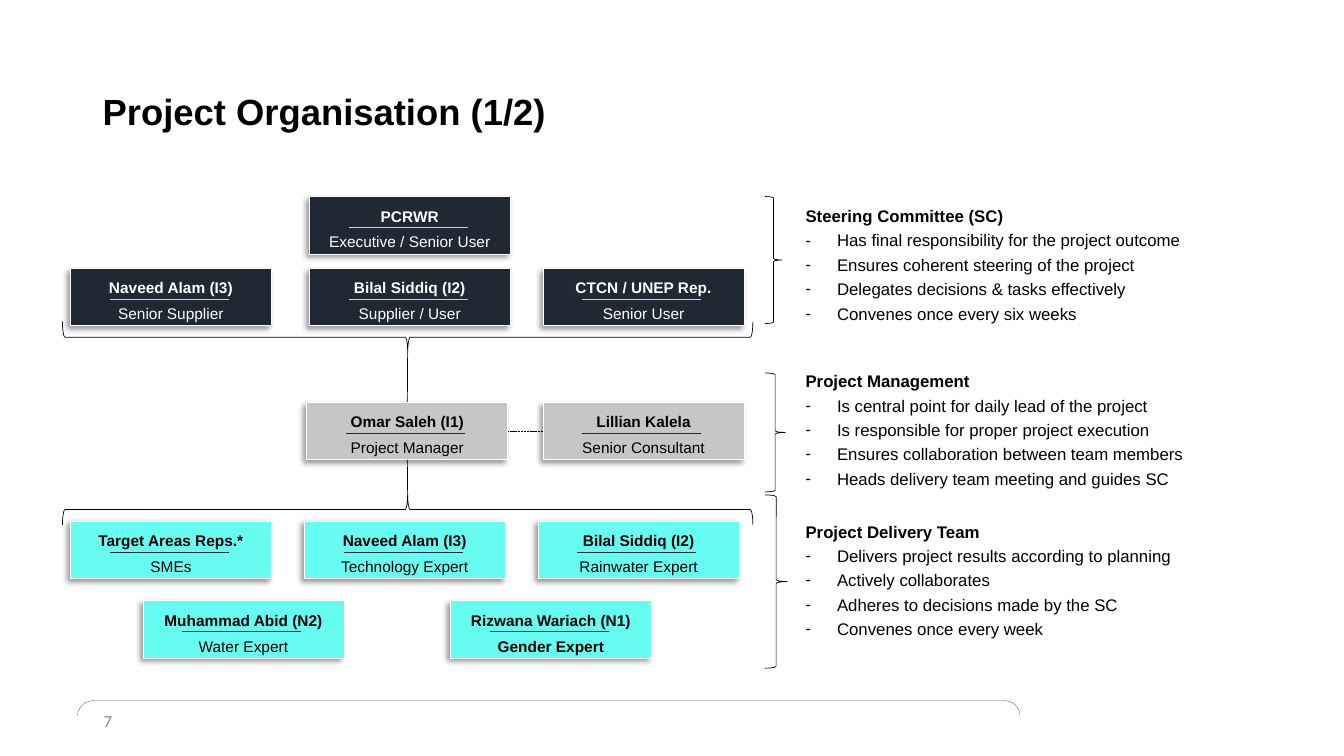
from dataclasses import dataclass

from lxml import etree
from pptx import Presentation
from pptx.dml.color import RGBColor
from pptx.enum.dml import MSO_LINE
from pptx.enum.shapes import MSO_CONNECTOR, MSO_SHAPE
from pptx.enum.text import MSO_ANCHOR, MSO_AUTO_SIZE, PP_ALIGN
from pptx.oxml.ns import qn
from pptx.util import Pt

RECT, BRACE, BRACKET = MSO_SHAPE.RECTANGLE, MSO_SHAPE.RIGHT_BRACE, MSO_SHAPE.LEFT_BRACKET
STRAIGHT, DASH = MSO_CONNECTOR.STRAIGHT, MSO_LINE.SQUARE_DOT
MIDDLE, LEFT, CENTER = MSO_ANCHOR.MIDDLE, PP_ALIGN.LEFT, PP_ALIGN.CENTER
FIXED = MSO_AUTO_SIZE.NONE
TOP, LEFT_SIDE, BOTTOM, RIGHT_SIDE = range(4)


@dataclass(frozen=True)
class Theme:
    font: str = "Arial"
    number_font: str = "Calibri"
    dark: str = "1F2833"
    gray: str = "C5C6C7"
    aqua: str = "66FCF1"
    black: str = "000000"
    white: str = "FFFFFF"
    frame: str = "595959"
    number: str = "8C8C8C"
    title_size: float = 26
    body_size: float = 12
    card_size: float = 11
    thin: float = 0.5
    hair: float = 0.25
    inset: float = 3


THEME = Theme()
CARD_W, CARD_H = 143.5, 41
RULE_X, RULE_Y, RULE_W = 28, 22, 85
SPAN_X, SPAN_W, SPAN_H = 44.6, 493.2, 22.3
BRACE_X, NOTE_X, NOTE_W, NOTE_H = 546.5, 572.4, 322, 90.7

# Each row: top, fill, text colour, rule colour, cards (left, name, role, bold role)
ROWS = [
    (140.4, THEME.dark, THEME.white, THEME.aqua, [
        (221, "PCRWR", "Executive / Senior User", False)]),
    (191.5, THEME.dark, THEME.white, THEME.aqua, [
        (50.4, "Naveed Alam (I3)", "Senior Supplier", False),
        (221, "Bilal Siddiq (I2)", "Supplier / User", False),
        (388, "CTCN / UNEP Rep.", "Senior User", False)]),
    (287.3, THEME.gray, THEME.black, THEME.dark, [
        (219.2, "Omar Saleh (I1)", "Project Manager", False),
        (388, "Lillian Kalela", "Senior Consultant", False)]),
    (372.2, THEME.aqua, THEME.black, THEME.dark, [
        (50.4, "Target Areas Reps.*", "SMEs", False),
        (217.4, "Naveed Alam (I3)", "Technology Expert", False),
        (384.5, "Bilal Siddiq (I2)", "Rainwater Expert", False)]),
    (429.1, THEME.aqua, THEME.black, THEME.dark, [
        (102.2, "Muhammad Abid (N2)", "Water Expert", False),
        (321.8, "Rizwana Wariach (N1)", "Gender Expert", True)]),
]

# Each note: text top, brace box (top, width, height), heading, points
NOTES = [
    (144, (140.4, 12.2, 90.7), "Steering Committee (SC)", [
        "Has final responsibility for the project outcome",
        "Ensures coherent steering of the project",
        "Delegates decisions & tasks effectively",
        "Convenes once every six weeks"]),
    (262, (266.4, 14.4, 85), "Project Management", [
        "Is central point for daily lead of the project",
        "Is responsible for proper project execution",
        "Ensures collaboration between team members",
        "Heads delivery team meeting and guides SC"]),
    (369.4, (353.5, 15.8, 123.8), "Project Delivery Team", [
        "Delivers project results according to planning",
        "Actively collaborates",
        "Adheres to decisions made by the SC",
        "Convenes once every week"]),
]


def points(*lengths):
    return [Pt(length) for length in lengths]


def style(font, size, color, bold=False, name=THEME.font):
    font.name, font.size, font.bold = name, Pt(size), bold
    font.color.rgb = RGBColor.from_string(color)


def pad(frame):
    frame.word_wrap = True
    frame.margin_left = frame.margin_right = Pt(THEME.inset)
    frame.margin_top = frame.margin_bottom = Pt(THEME.inset)


def ink(line, color=THEME.black, width=THEME.thin):
    line.color.rgb = RGBColor.from_string(color)
    line.width = Pt(width)


def add_line(slide, x1, y1, x2, y2, color=THEME.black):
    line = slide.shapes.add_connector(STRAIGHT, *points(x1, y1, x2, y2))
    ink(line.line, color)
    etree.SubElement(line._element.spPr, qn("a:effectLst"))
    return line


def add_curve(slide, kind, x, y, w, h, turn=0):
    """Draw a brace or bracket that fills the given box after its turn."""
    if turn:
        x, y, w, h = x + (w - h) / 2, y + (h - w) / 2, h, w
    curve = slide.shapes.add_shape(kind, *points(x, y, w, h))
    curve.shadow.inherit = False
    curve.fill.background()
    ink(curve.line)
    curve.rotation = turn
    return curve


def cast_shade(shape):
    shape.shadow.inherit = False
    effects = shape._element.spPr.find(qn("a:effectLst"))
    shade = etree.SubElement(effects, qn("a:outerShdw"), blurRad=str(Pt(4)),
                             dist=str(Pt(3)), dir="8100000", algn="tr", rotWithShape="0")
    color = etree.SubElement(shade, qn("a:srgbClr"), val=THEME.black)
    etree.SubElement(color, qn("a:alpha"), val="40000")


def add_card(slide, x, y, name, role, fill, color, rule, bold):
    card = slide.shapes.add_shape(RECT, *points(x, y, CARD_W, CARD_H))
    card.fill.solid()
    card.fill.fore_color.rgb = RGBColor.from_string(fill)
    ink(card.line, THEME.white)
    cast_shade(card)
    frame = card.text_frame
    pad(frame)
    frame.vertical_anchor = MIDDLE
    frame.text = f"{name}\n{role}"
    for para, heavy in zip(frame.paragraphs, (True, bold)):
        para.alignment, para.line_spacing = CENTER, 1.4
        style(para.runs[0].font, THEME.card_size, color, heavy)
    add_line(slide, x + RULE_X, y + RULE_Y, x + RULE_X + RULE_W, y + RULE_Y, rule)
    return card


def add_chart_tree(slide):
    """Place the cards and the lines that tie the three levels together."""
    upper, lower = 229.7, 352.8
    add_curve(slide, BRACE, SPAN_X, upper, SPAN_W, SPAN_H, 90)
    add_curve(slide, BRACE, SPAN_X, lower, SPAN_W, SPAN_H, 270)
    cards = {}
    for top, fill, color, rule, row in ROWS:
        for x, name, role, bold in row:
            cards[role] = add_card(slide, x, top, name, role, fill, color, rule, bold)
    lead, aide = cards["Project Manager"], cards["Senior Consultant"]
    mid = SPAN_X + SPAN_W / 2
    add_line(slide, mid, upper + SPAN_H, mid, 287.3).end_connect(lead, TOP)
    add_line(slide, mid, lower, mid, 328.3).end_connect(lead, BOTTOM)
    link = add_line(slide, 388, 307.8, 362.7, 307.8)
    link.begin_connect(aide, LEFT_SIDE)
    link.end_connect(lead, RIGHT_SIDE)
    link.line.dash_style = DASH


def add_note(slide, top, brace, head, items):
    y, w, h = brace
    add_curve(slide, BRACE, BRACE_X, y, w, h)
    frame = slide.shapes.add_textbox(*points(NOTE_X, top, NOTE_W, NOTE_H)).text_frame
    pad(frame)
    frame.text = "\n".join([head, *items])
    for i, para in enumerate(frame.paragraphs):
        if i:
            para.space_before = Pt(3)
            props = para._p.get_or_add_pPr()
            props.set("marL", str(Pt(22.5)))
            props.set("indent", str(-Pt(22.5)))
            etree.SubElement(props, qn("a:buFont"), typeface=THEME.font)
            etree.SubElement(props, qn("a:buChar"), char="⁃")
        style(para.runs[0].font, THEME.body_size, THEME.black, i == 0)


def add_title(slide):
    title = slide.shapes.title
    title.left, title.top, title.width, title.height = points(66.2, 28.8, 828, 104.4)
    frame = title.text_frame
    frame.text = "Project Organisation (1/2)"
    frame.auto_size, frame.vertical_anchor = FIXED, MIDDLE
    para = frame.paragraphs[0]
    para.alignment, para.line_spacing = LEFT, 0.9
    style(para.runs[0].font, THEME.title_size, THEME.black, True)


def add_foot(slide):
    bracket = add_curve(slide, BRACKET, 55.4, 500.4, 673.2, 10.8, 90)
    bracket.adjustments[0] = 1.08
    ink(bracket.line, THEME.frame, THEME.hair)
    frame = slide.shapes.add_textbox(*points(67, 500.4, 216, 28.8)).text_frame
    frame.word_wrap, frame.vertical_anchor = True, MIDDLE
    frame.text = "7"
    style(frame.paragraphs[0].runs[0].font, THEME.body_size, THEME.number,
          name=THEME.number_font)


def main():
    deck = Presentation()
    deck.slide_width, deck.slide_height = points(960, 540)
    slide = deck.slides.add_slide(deck.slide_layouts[5])
    add_foot(slide)
    add_title(slide)
    add_chart_tree(slide)
    for note in NOTES:
        add_note(slide, *note)
    deck.save("out.pptx")


if __name__ == "__main__":
    main()
